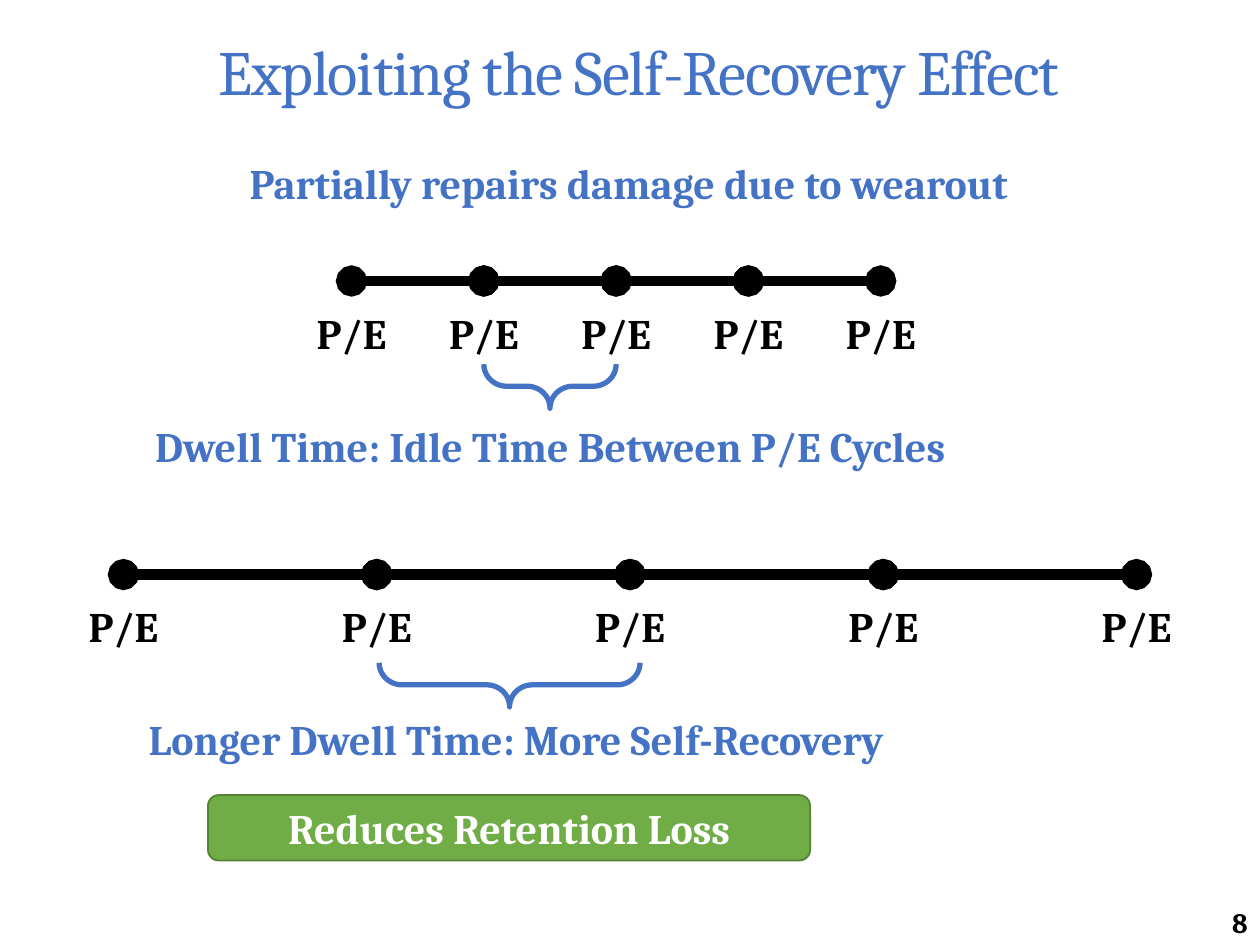
from dataclasses import dataclass

from lxml import etree
from pptx import Presentation
from pptx.dml.color import RGBColor as RGB
from pptx.enum.shapes import MSO_CONNECTOR as CONN, MSO_SHAPE as SHAPE
from pptx.enum.text import MSO_ANCHOR as ANCHOR, PP_ALIGN as ALIGN
from pptx.oxml.ns import qn
from pptx.util import Inches, Pt


@dataclass(frozen=True)
class Theme:
    font: str = "Cambria"
    blue: RGB = RGB(0x44, 0x72, 0xC4)
    black: RGB = RGB(0, 0, 0)
    white: RGB = RGB(255, 255, 255)
    green: RGB = RGB(0x70, 0xAD, 0x47)
    dark_green: RGB = RGB(0x53, 0x81, 0x35)
    title: Pt = Pt(36)
    body: Pt = Pt(24)
    number: Pt = Pt(16)


T = Theme()


def write(sp, text, color, size=T.body, bold=True, align=ALIGN.CENTER, anchor=ANCHOR.TOP):
    """Fill a shape with one styled run and return its paragraph and run."""
    tf = sp.text_frame
    tf.word_wrap = True
    tf.vertical_anchor = anchor
    p = tf.paragraphs[0]
    p.alignment = align
    r = p.add_run()
    r.text = text
    r.font.name, r.font.size, r.font.bold = T.font, size, bold
    r.font.color.rgb = color
    return p, r


def add_shape(kind, box, fill=None, line=None, width=1):
    sp = s.shapes.add_shape(kind, *map(Inches, box))
    sp.shadow.inherit = False
    if fill is None:
        sp.fill.background()
    else:
        sp.fill.solid()
        sp.fill.fore_color.rgb = fill
    if line is None:
        sp.line.fill.background()
    else:
        sp.line.color.rgb = line
        sp.line.width = Pt(width)
    return sp


prs = Presentation()
prs.slide_width, prs.slide_height = Inches(10), Inches(7.5)
s = prs.slides.add_slide(prs.slide_layouts[6])

# Title and slide number
title = s.shapes.add_textbox(0, 0, Inches(10), Inches(1.19))
p, r = write(title, "Exploiting the Self-Recovery Effect", T.blue, T.title,
             bold=False, anchor=ANCHOR.MIDDLE)
p.line_spacing = 0.9
p._p.get_or_add_pPr().set("marL", str(Inches(0.14)))
r._r.get_or_add_rPr().set("spc", "-70")

number = s.shapes.add_textbox(Inches(8.96), Inches(7.13), Inches(1.04), Inches(0.37))
write(number, "8", T.black, T.number, align=ALIGN.RIGHT, anchor=ANCHOR.BOTTOM)

# Timelines: first dot x, y, gap, label width, brace box, caption, caption box
timelines = [
    (2.79, 2.23, 1.05, 0.78, (4.19, 2.54, 0.35, 1.05),
     "Dwell Time: Idle Time Between P/E Cycles", (0.97, 3.29, 6.79, 0.5)),
    (0.98, 4.56, 2.01, 1.5, (3.87, 4.4, 0.35, 2.07),
     "Longer Dwell Time: More Self-Recovery", (0.72, 5.61, 6.75, 0.5)),
]
CYCLES = 5
for x0, y, gap, label_w, brace_box, caption, caption_box in timelines:
    dots = [x0 + i * gap for i in range(CYCLES)]
    for x1, x2 in zip(dots, dots[1:]):
        segment = s.shapes.add_connector(CONN.STRAIGHT, Inches(x1), Inches(y),
                                         Inches(x2), Inches(y))
        segment.line.color.rgb = T.black
        segment.line.width = Pt(6)
        ln = segment.line._get_or_add_ln()
        for end in ("a:headEnd", "a:tailEnd"):
            etree.SubElement(ln, qn(end), type="oval")
        etree.SubElement(segment._element.spPr, qn("a:effectLst"))
    for x in dots:
        label = s.shapes.add_textbox(Inches(x - label_w / 2), Inches(y + 0.16),
                                     Inches(label_w), Inches(0.5))
        write(label, "P/E", T.black)
    write(s.shapes.add_textbox(*map(Inches, caption_box)), caption, T.blue)
    brace = add_shape(SHAPE.LEFT_BRACE, brace_box, line=T.blue, width=3)
    brace.rotation = 270
    brace.adjustments[0] = 0.516
    brace.adjustments[1] = 0.5

# Statements
result = add_shape(SHAPE.ROUNDED_RECTANGLE, (1.65, 6.31, 4.78, 0.52), T.green, T.dark_green)
write(result, "Reduces Retention Loss", T.white, anchor=ANCHOR.MIDDLE)
effect = add_shape(SHAPE.ROUNDED_RECTANGLE, (1.29, 1.19, 7.4, 0.52))
write(effect, "Partially repairs damage due to wearout", T.blue, anchor=ANCHOR.MIDDLE)

prs.save("out.pptx")
